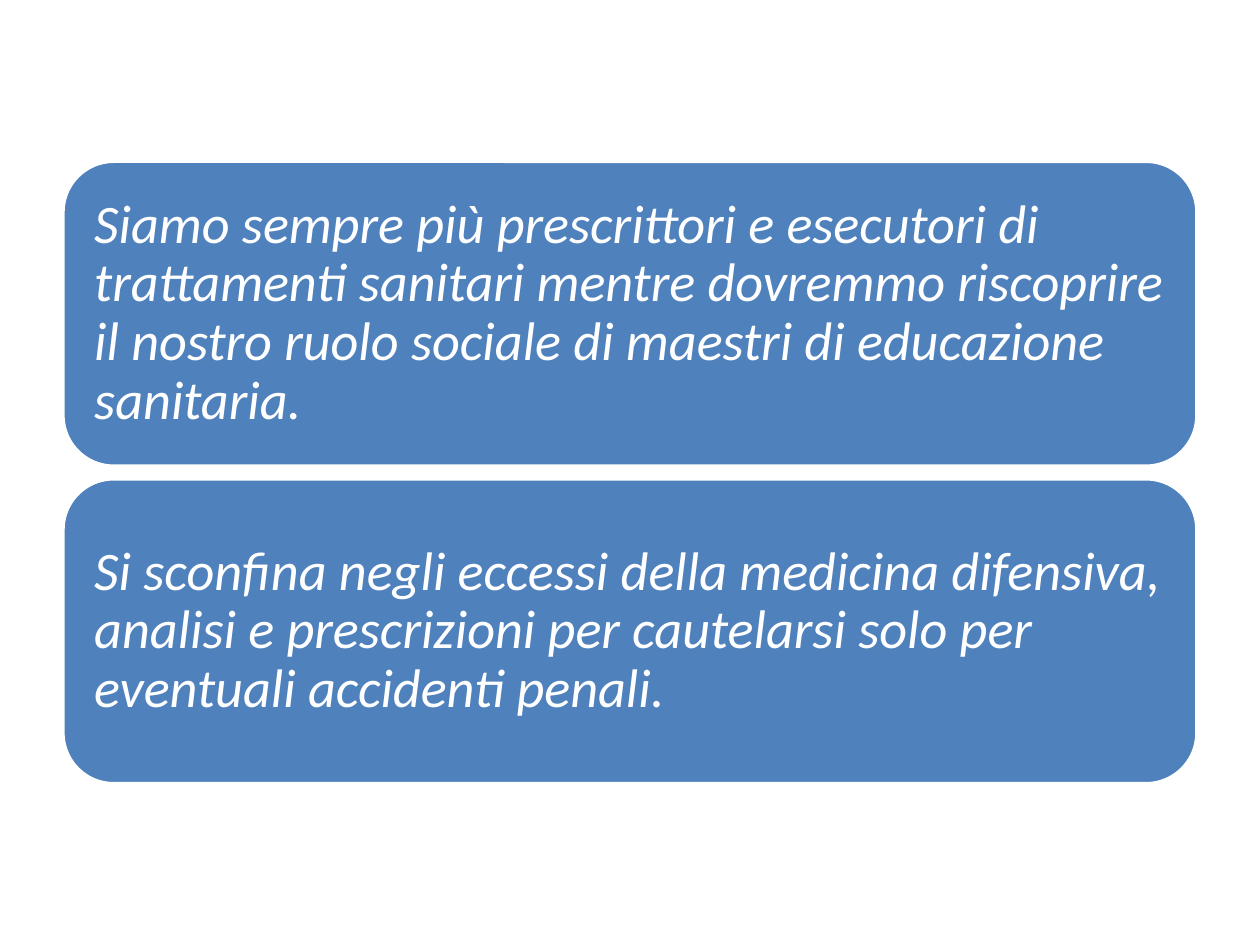
from dataclasses import dataclass

from pptx import Presentation
from pptx.dml.color import RGBColor
from pptx.enum.shapes import MSO_SHAPE as Shape
from pptx.enum.text import MSO_ANCHOR as Anchor, PP_ALIGN as Align
from pptx.util import Inches, Pt


@dataclass(frozen=True)
class Theme:
    """Colours and type of the slide."""
    panel: RGBColor = RGBColor(0x4F, 0x81, 0xBD)
    light: RGBColor = RGBColor(0xFF, 0xFF, 0xFF)
    font: str = "Calibri"
    size: int = 31
    outline: int = 2


THEME = Theme()
PANEL_LEFT, PANEL_TOP, PANEL_WIDTH, PANEL_HEIGHT = 0.5, 1.28, 9, 2.42
PANEL_GAP = 0.1
PANEL_MARGIN = 0.13
STATEMENTS = (
    "Siamo sempre più prescrittori e esecutori di trattamenti sanitari mentre "
    "dovremmo riscoprire il nostro ruolo sociale di maestri di educazione sanitaria.",
    "Si sconfina negli eccessi della medicina difensiva, analisi e prescrizioni "
    "per cautelarsi solo per eventuali accidenti penali.",
)


def add_panel(slide, top, text):
    """Add a rounded panel that holds one statement."""
    shape = slide.shapes.add_shape(
        Shape.ROUNDED_RECTANGLE, Inches(PANEL_LEFT), Inches(top),
        Inches(PANEL_WIDTH), Inches(PANEL_HEIGHT))
    shape.shadow.inherit = False
    shape.fill.solid()
    shape.fill.fore_color.rgb = THEME.panel
    shape.line.color.rgb = THEME.light
    shape.line.width = Pt(THEME.outline)
    write_statement(shape.text_frame, text)


def write_statement(frame, text):
    """Set a statement in italics, left-aligned and vertically centred."""
    frame.word_wrap = True
    frame.vertical_anchor = Anchor.MIDDLE
    frame.margin_left = frame.margin_right = Inches(PANEL_MARGIN)
    frame.margin_top = frame.margin_bottom = Inches(PANEL_MARGIN)
    paragraph = frame.paragraphs[0]
    paragraph.text = text
    paragraph.alignment = Align.LEFT
    paragraph.line_spacing = 0.9
    font = paragraph.font
    font.name = THEME.font
    font.size = Pt(THEME.size)
    font.italic = True
    font.color.rgb = THEME.light


def main():
    """Build the slide and save it."""
    presentation = Presentation()
    presentation.slide_width = Inches(10)
    presentation.slide_height = Inches(7.5)
    slide = presentation.slides.add_slide(presentation.slide_layouts[6])
    for index, text in enumerate(STATEMENTS):
        add_panel(slide, PANEL_TOP + index * (PANEL_HEIGHT + PANEL_GAP), text)
    presentation.save("out.pptx")


if __name__ == "__main__":
    main()
